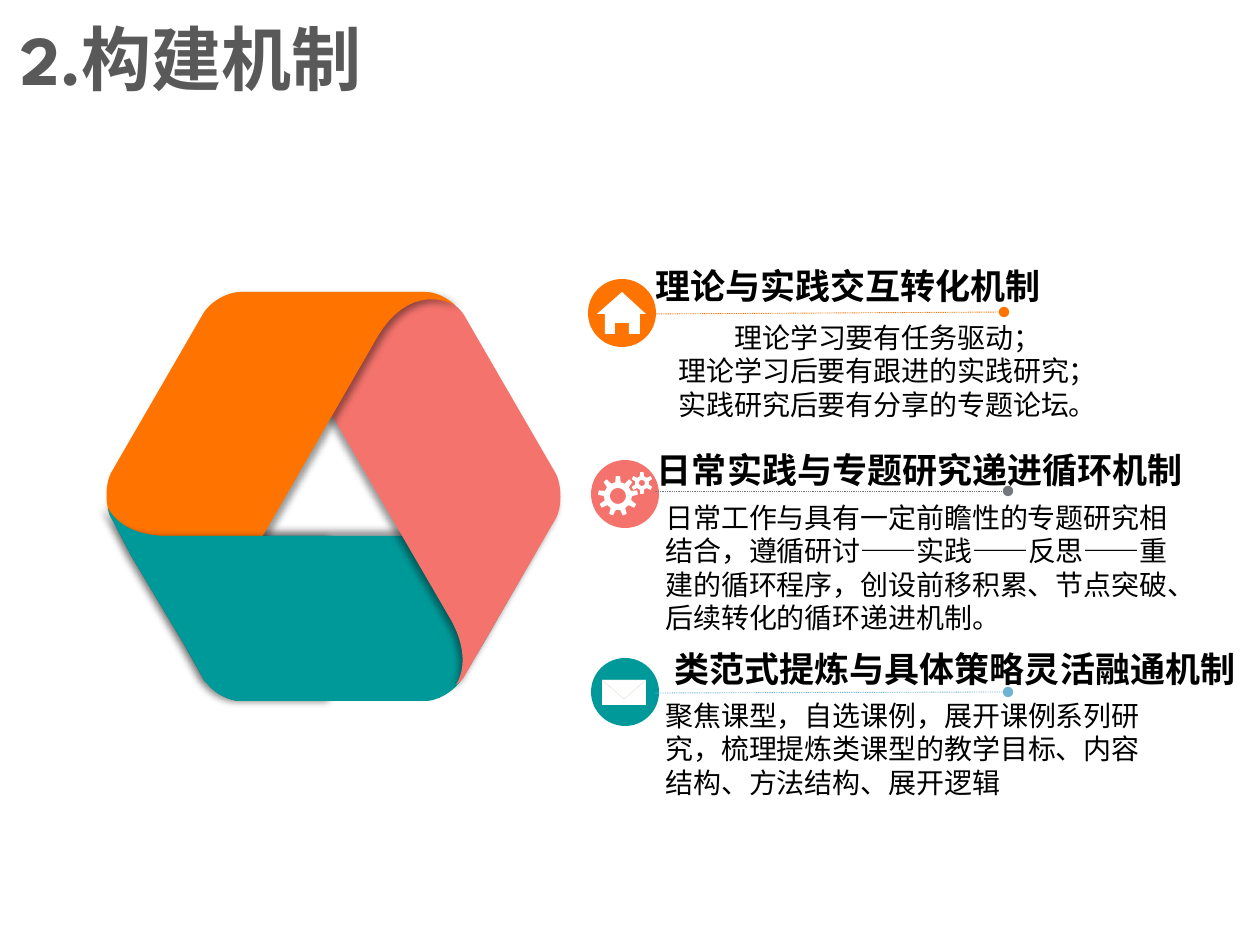
"""Build the slide on mechanisms: a folded hexagon beside three explained items."""
import math

from lxml import etree
from pptx import Presentation
from pptx.dml.color import RGBColor
from pptx.enum.dml import MSO_LINE
from pptx.enum.shapes import MSO_CONNECTOR, MSO_SHAPE
from pptx.enum.text import MSO_AUTO_SIZE, PP_ALIGN
from pptx.oxml.ns import qn
from pptx.util import Emu, Pt

PX = 914400 / 126
OVAL, RECT, TRIANGLE = MSO_SHAPE.OVAL, MSO_SHAPE.RECTANGLE, MSO_SHAPE.ISOSCELES_TRIANGLE
STRAIGHT, DOTTED = MSO_CONNECTOR.STRAIGHT, MSO_LINE.ROUND_DOT
LEFT, CENTER = PP_ALIGN.LEFT, PP_ALIGN.CENTER
FIT_SHAPE = MSO_AUTO_SIZE.SHAPE_TO_FIT_TEXT
BADGE = 68
COLORS = {
    "orange": "FF7300", "pink": "F4736C", "teal": "009999", "white": "FFFFFF",
    "gray": "74787D", "blue": "6EB3D2", "beige": "E5E1D6",
    "black": "000000", "title": "595959",
}

TEAL_TOP_LEFT = [(108, 508), (117, 525, 138, 536, 168, 536)]
TEAL_BOTTOM_LEFT = [
    (241, 701), (229, 701, 214, 693, 207, 683), (205, 682, 204, 681, 203, 678),
    (184, 644), (132, 557), (112, 519), (110, 516, 109, 513, 108, 508),
]
TEAL_RIGHT = [
    (499, 536), (528, 536, 548, 525, 558, 508), (557, 513, 556, 516, 554, 519),
    (533, 557), (483, 644), (462, 678), (461, 681, 460, 682, 459, 683),
    (451, 693, 437, 701, 425, 701),
]
PINK_FOLD = [
    (287, 338), (451, 620), (465, 645, 466, 669, 456, 685),
    (460, 682, 462, 680, 464, 677), (556, 518), (562, 507, 562, 486, 556, 474),
    (464, 315), (457, 304, 440, 294, 426, 294), (243, 294),
    (233, 294, 223, 297, 214, 305), (239, 292, 267, 304, 287, 338),
]
ORANGE_FOLD = [
    (111, 517), (203, 675), (204, 678, 207, 680, 208, 683),
    (200, 665, 202, 644, 215, 619), (378, 336), (399, 301, 428, 292, 455, 305),
    (446, 297, 435, 292, 425, 292), (241, 292), (227, 292, 210, 302, 203, 314),
    (111, 473), (105, 485, 105, 505, 111, 517),
]
FOLDS = [
    (TEAL_TOP_LEFT + TEAL_RIGHT + TEAL_BOTTOM_LEFT, "teal", 270),
    (PINK_FOLD, "pink", 135),
    (ORANGE_FOLD, "orange", 45),
    (TEAL_TOP_LEFT + [(333, 536), (333, 701)] + TEAL_BOTTOM_LEFT, "teal", 170),
]
HOUSE = [
    (622, 292), (646, 314), (640, 314), (640, 334), (629, 334), (629, 323),
    (615, 323), (615, 334), (605, 334), (605, 314), (597, 314),
]
ITEMS = [
    {"badge": (588, 279), "color": "orange",
     "rule": (1004, 312, 651, 314), "rule_color": "orange",
     "heading": "理论与实践交互转化机制", "heading_box": (629, 258, 438, 55),
     "body": "理论学习要有任务驱动；\n理论学习后要有跟进的实践研究；\n实践研究后要有分享的专题论坛。",
     "body_box": (629, 314, 518, 115), "body_align": CENTER},
    {"badge": (591, 460), "color": "pink",
     "rule": (1008, 491, 655, 491), "rule_color": "gray",
     "heading": "日常实践与专题研究递进循环机制", "heading_box": (635, 442, 570, 55),
     "body": "日常工作与具有一定前瞻性的专题研究相结合，遵循研讨——实践——反思——重建的循环程序，"
             "创设前移积累、节点突破、后续转化的循环递进机制。",
     "body_box": (653, 494, 552, 149), "body_align": LEFT},
    {"badge": (591, 658), "color": "teal",
     "rule": (1008, 692, 654, 693), "rule_color": "blue",
     "heading": "类范式提炼与具体策略灵活融通机制", "heading_box": (661, 641, 588, 55),
     "body": "聚焦课型，自选课例，展开课例系列研究，梳理提炼类课型的教学目标、内容结构、方法结构、展开逻辑",
     "body_box": (653, 692, 513, 115), "body_align": LEFT},
]


def px(*lengths):
    """Turn pixel lengths into EMU."""
    return [Emu(round(length * PX)) for length in lengths]


def rgb(color):
    """Look up a named colour."""
    return RGBColor.from_string(COLORS[color])


def paint(shape, color):
    """Fill a shape plainly, without outline or shadow."""
    shape.shadow.inherit = False
    shape.fill.solid()
    shape.fill.fore_color.rgb = rgb(color)
    shape.line.fill.background()
    return shape


def flatten(outline, steps=12):
    """Turn corners and cubic curve segments into a list of points."""
    points = []
    for segment in outline:
        if len(segment) == 2:
            points.append(segment)
            continue
        controls = [points[-1], segment[:2], segment[2:4], segment[4:]]
        for step in range(1, steps + 1):
            t = step / steps
            weights = ((1 - t) ** 3, 3 * t * (1 - t) ** 2, 3 * t * t * (1 - t), t ** 3)
            points.append(tuple(
                sum(w * control[axis] for w, control in zip(weights, controls))
                for axis in (0, 1)))
    return points


def add_outline(slide, contours, color):
    """Add one filled freeform made of closed contours."""
    first, *holes = [[px(*point) for point in flatten(contour)] for contour in contours]
    builder = slide.shapes.build_freeform(*first[0])
    builder.add_line_segments(first[1:])
    for hole in holes:
        builder.move_to(*hole[0])
        builder.add_line_segments(hole[1:])
    return paint(builder.convert_to_shape(), color)


def add_fold(slide, outline, color, direction):
    """Add a ribbon fold that casts a soft shadow in a direction in degrees."""
    fold = add_outline(slide, [outline], color)
    effects = fold._element.spPr.find(qn("a:effectLst"))
    shadow = etree.SubElement(
        effects, qn("a:outerShdw"), blurRad=str(Pt(4)), dist=str(Pt(3)),
        dir=str(direction * 60000), algn="ctr", rotWithShape="0")
    tint = etree.SubElement(shadow, qn("a:srgbClr"), val=COLORS["black"])
    etree.SubElement(tint, qn("a:alpha"), val="40000")


def add_preset(slide, kind, box, color):
    """Add a plain preset shape."""
    return paint(slide.shapes.add_shape(kind, *px(*box)), color)


def add_gear(slide, center, radii, teeth):
    """Add a white gear from its tip, root and hole radii."""
    tip, root, hole = radii

    def polar(radius, turn):
        """Find a point by its share of a turn from the top."""
        angle = 2 * math.pi * turn
        return center[0] + radius * math.sin(angle), center[1] - radius * math.cos(angle)

    corners = [(root, -0.28), (tip, -0.15), (tip, 0.15), (root, 0.28)]
    rim = [polar(radius, (tooth + shift) / teeth)
           for tooth in range(teeth) for radius, shift in corners]
    add_outline(slide, [rim, [polar(hole, -step / 24) for step in range(24)]], "white")


def add_envelope(slide):
    """Add the envelope icon with its outlined flap."""
    add_preset(slide, RECT, (602, 680, 44, 25), "white")
    flap = add_preset(slide, TRIANGLE, (602, 680, 44, 19), "white")
    flap.rotation = 180
    flap.line.color.rgb = rgb("beige")
    flap.line.width = Pt(0.25)


def add_rule(slide, ends, color):
    """Add a dotted rule that starts with a round dot."""
    rule = slide.shapes.add_connector(STRAIGHT, *px(*ends))
    rule.line.color.rgb = rgb(color)
    rule.line.width = Pt(0.5)
    rule.line.dash_style = DOTTED
    etree.SubElement(rule.line._get_or_add_ln(), qn("a:headEnd"), type="oval")
    etree.SubElement(rule._element.spPr, qn("a:effectLst"))


def add_text(slide, box, text, size, align=LEFT, bold=False, font="Arial", color="black"):
    """Add a wrapped text box in one style."""
    frame = slide.shapes.add_textbox(*px(*box)).text_frame
    frame.word_wrap = True
    frame.auto_size = FIT_SHAPE
    frame.text = text
    for paragraph in frame.paragraphs:
        paragraph.alignment = align
        for run in paragraph.runs:
            run.font.name = font
            run.font.size = Pt(size)
            run.font.bold = bold
            run.font.color.rgb = rgb(color)


def main():
    """Build and save the slide."""
    deck = Presentation()
    deck.slide_width, deck.slide_height = px(1260, 945)
    slide = deck.slides.add_slide(deck.slide_layouts[6])
    for fold in FOLDS:
        add_fold(slide, *fold)
    for item in ITEMS:
        add_preset(slide, OVAL, (*item["badge"], BADGE, BADGE), item["color"])
        add_rule(slide, item["rule"], item["rule_color"])
        add_text(slide, item["heading_box"], item["heading"], 20, CENTER, bold=True)
        add_text(slide, item["body_box"], item["body"], 16, item["body_align"])
    add_outline(slide, [HOUSE], "white")
    add_gear(slide, (618, 496), (20, 14, 8), 9)
    add_gear(slide, (642, 483), (11, 7, 3), 6)
    add_envelope(slide)
    add_text(slide, (8, 9, 417, 97), "2.构建机制", 40, bold=True,
             font="League Spartan", color="title")
    deck.save("out.pptx")


if __name__ == "__main__":
    main()
